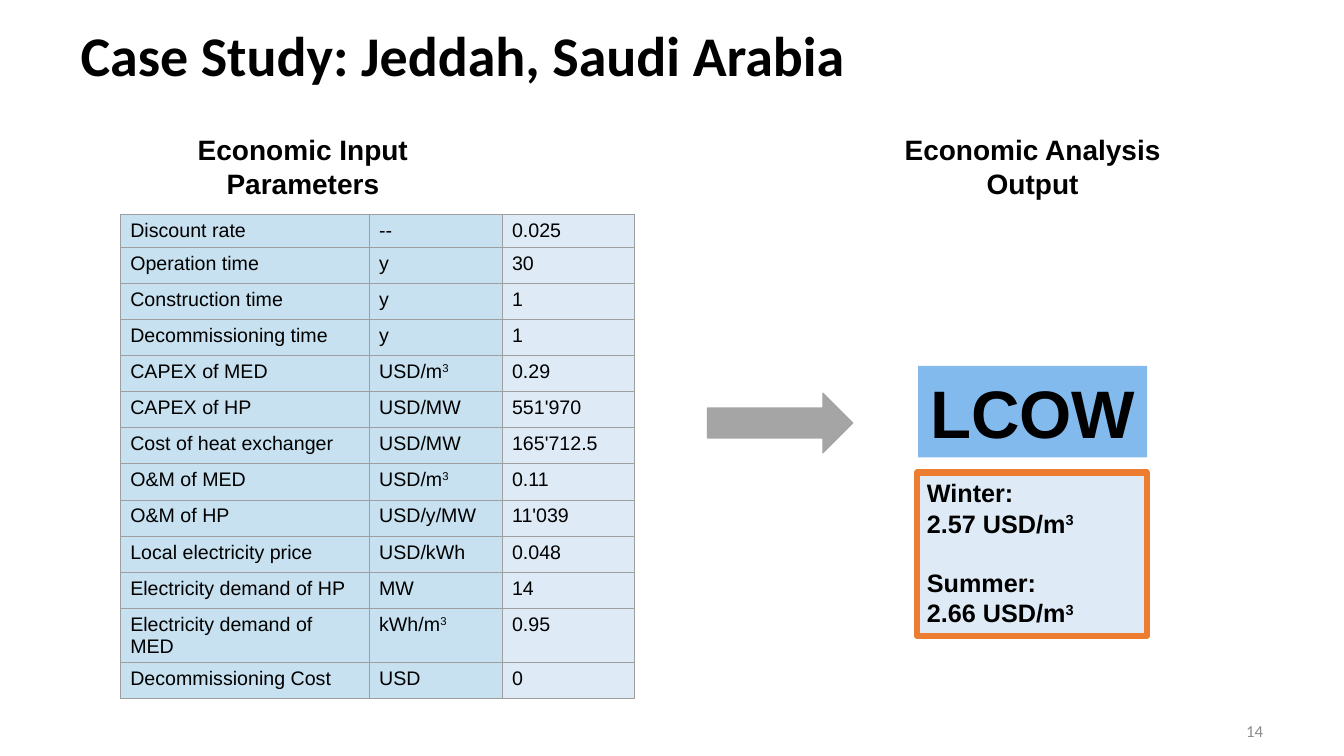
from lxml import etree
from pptx import Presentation
from pptx.dml.color import RGBColor
from pptx.enum.shapes import MSO_SHAPE
from pptx.enum.text import MSO_ANCHOR, MSO_AUTO_SIZE, PP_ALIGN
from pptx.oxml.ns import qn
from pptx.util import Cm, Pt

LEFT, CENTER, RIGHT = PP_ALIGN.LEFT, PP_ALIGN.CENTER, PP_ALIGN.RIGHT
TOP, MIDDLE = MSO_ANCHOR.TOP, MSO_ANCHOR.MIDDLE
RECTANGLE, RIGHT_ARROW = MSO_SHAPE.RECTANGLE, MSO_SHAPE.RIGHT_ARROW

COLORS = {
    "text": "000000",
    "page": "8C8C8C",
    "label": "C7E1F0",
    "value": "DEEBF7",
    "border": "9E9E9E",
    "arrow": "A5A5A5",
    "lcow": "82BAED",
    "frame": "ED7D31",
}

# Label, unit, value; "^" starts a superscript
PARAMETERS = [
    ("Discount rate", "--", "0.025"),
    ("Operation time", "y", "30"),
    ("Construction time", "y", "1"),
    ("Decommissioning time", "y", "1"),
    ("CAPEX of MED", "USD/m^3", "0.29"),
    ("CAPEX of HP", "USD/MW", "551'970"),
    ("Cost of heat exchanger", "USD/MW", "165'712.5"),
    ("O&M of MED", "USD/m^3", "0.11"),
    ("O&M of HP", "USD/y/MW", "11'039"),
    ("Local electricity price", "USD/kWh", "0.048"),
    ("Electricity demand of HP", "MW", "14"),
    ("Electricity demand of MED", "kWh/m^3", "0.95"),
    ("Decommissioning Cost", "USD", "0"),
]
COLUMN_WIDTHS = [6.27, 3.35, 3.35]
FIRST_ROW, ROW = 0.83, 0.91


def rgb(name):
    return RGBColor.from_string(COLORS[name])


def write(paragraph, text, size, bold=False, align=LEFT, font="Arial", color="text"):
    """Fill a paragraph; what follows "^" is raised."""
    base, _, raised = text.partition("^")
    paragraph.add_run().text = base
    if raised:
        run = paragraph.add_run()
        run.text = raised
        run.font._element.set("baseline", "30000")
    paragraph.alignment = align
    paragraph.font.name = font
    paragraph.font.size = Pt(size)
    paragraph.font.bold = bold
    paragraph.font.color.rgb = rgb(color)


def remove_margins(frame):
    frame.margin_left = frame.margin_right = 0
    frame.margin_top = frame.margin_bottom = 0


def add_title(slide, text):
    title = slide.shapes.title
    title.left, title.top, title.width, title.height = Cm(2.03), Cm(0.71), Cm(29.8), Cm(2.5)
    frame = title.text_frame
    frame.auto_size = MSO_AUTO_SIZE.NONE
    frame.vertical_anchor = TOP
    remove_margins(frame)
    frame.paragraphs[0].line_spacing = 0.9
    write(frame.paragraphs[0], text, 40, True, font="Calibri")


def add_text(slide, left, top, width, height):
    frame = slide.shapes.add_textbox(Cm(left), Cm(top), Cm(width), Cm(height)).text_frame
    frame.word_wrap = True
    return frame


def add_heading(slide, left, text):
    frame = add_text(slide, left, 3.22, 9.07, 1.96)
    write(frame.paragraphs[0], text, 20, True, CENTER)


def add_box(slide, kind, left, top, width, height, fill, line=None, line_width=1):
    box = slide.shapes.add_shape(kind, Cm(left), Cm(top), Cm(width), Cm(height))
    box.shadow.inherit = False
    box.fill.solid()
    box.fill.fore_color.rgb = rgb(fill)
    if line:
        box.line.color.rgb = rgb(line)
        box.line.width = Pt(line_width)
    else:
        box.line.fill.background()
    return box


def add_borders(cell):
    properties = cell._tc.get_or_add_tcPr()
    for side in ("a:lnL", "a:lnR", "a:lnT", "a:lnB"):
        line = etree.SubElement(properties, qn(side), w=str(Pt(0.75)))
        fill = etree.SubElement(line, qn("a:solidFill"))
        etree.SubElement(fill, qn("a:srgbClr"), val=COLORS["border"])


def add_parameter_table(slide):
    heights = [FIRST_ROW] + [ROW] * (len(PARAMETERS) - 1)
    table = slide.shapes.add_table(
        len(PARAMETERS), len(COLUMN_WIDTHS),
        Cm(3.03), Cm(5.4), Cm(sum(COLUMN_WIDTHS)), Cm(sum(heights)),
    ).table
    table.first_row = table.horz_banding = False
    for column, width in zip(table.columns, COLUMN_WIDTHS):
        column.width = Cm(width)
    for row, height, texts in zip(table.rows, heights, PARAMETERS):
        row.height = Cm(height)
        for cell, text, fill in zip(row.cells, texts, ("label", "label", "value")):
            add_borders(cell)
            cell.fill.solid()
            cell.fill.fore_color.rgb = rgb(fill)
            write(cell.text_frame.paragraphs[0], text, 14)


def add_lcow(slide):
    lcow = add_box(slide, RECTANGLE, 23.14, 9.22, 5.77, 2.31, "lcow").text_frame
    lcow.word_wrap = False
    lcow.vertical_anchor = MIDDLE
    write(lcow.paragraphs[0], "LCOW", 48, True, CENTER)

    costs = add_box(slide, RECTANGLE, 23.11, 11.91, 5.79, 4.11,
                    "value", "frame", 4.5).text_frame
    costs.vertical_anchor = TOP
    write(costs.paragraphs[0], "Winter:", 18, True)
    write(costs.add_paragraph(), "2.57 USD/m^3", 18, True)
    summer = costs.add_paragraph()
    summer.space_before = Pt(21)
    write(summer, "Summer:", 18, True)
    write(costs.add_paragraph(), "2.66 USD/m^3", 18, True)


def add_page_number(slide, number):
    frame = add_text(slide, 30.94, 18.11, 0.89, 0.61)
    remove_margins(frame)
    frame.vertical_anchor = MIDDLE
    write(frame.paragraphs[0], number, 12, align=RIGHT, font="Calibri", color="page")


def main():
    deck = Presentation()
    deck.slide_width, deck.slide_height = Cm(33.87), Cm(19.05)
    slide = deck.slides.add_slide(deck.slide_layouts.get_by_name("Title Only"))
    add_title(slide, "Case Study: Jeddah, Saudi Arabia")
    add_parameter_table(slide)
    add_heading(slide, 3.1, "Economic Input Parameters")
    add_box(slide, RIGHT_ARROW, 17.83, 9.91, 3.66, 1.5, "arrow", "arrow")
    add_heading(slide, 21.49, "Economic Analysis Output")
    add_lcow(slide)
    add_page_number(slide, "14")
    deck.save("out.pptx")


if __name__ == "__main__":
    main()
